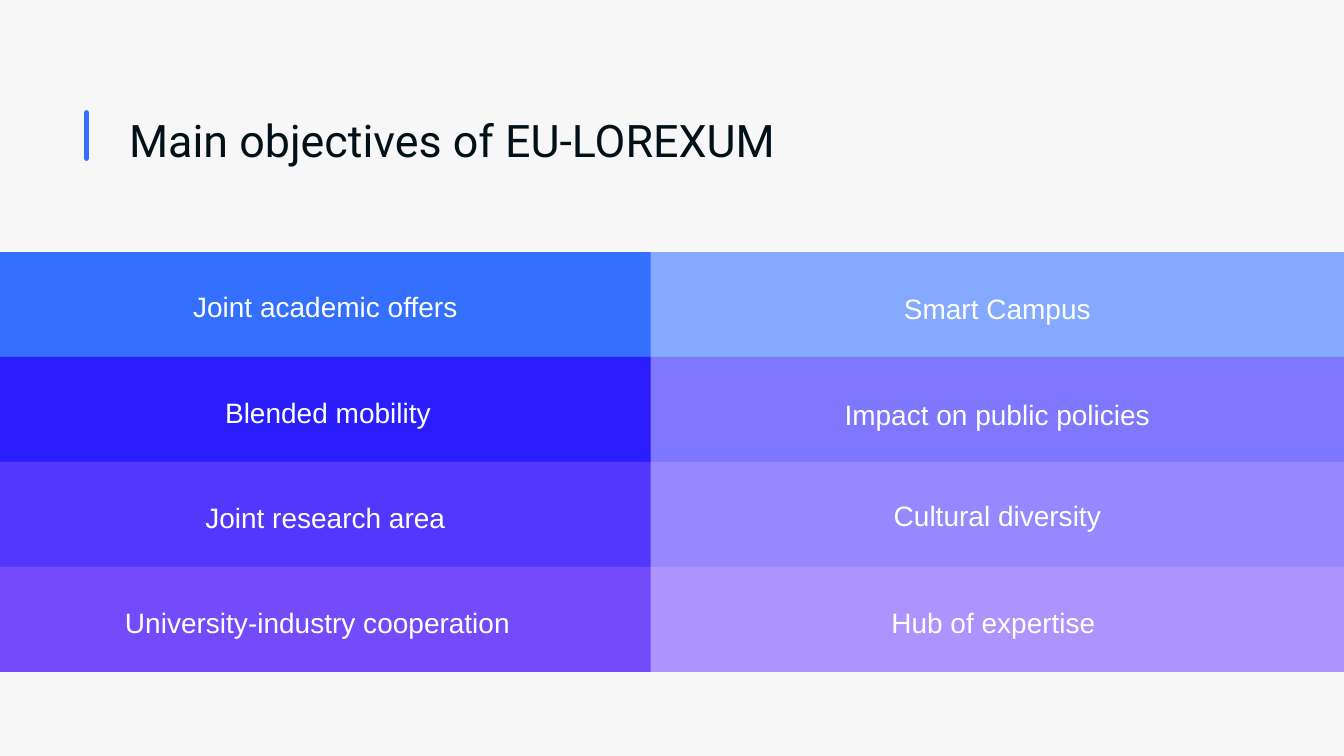
from dataclasses import dataclass

from lxml.etree import SubElement
from pptx import Presentation
from pptx.dml.color import RGBColor
from pptx.enum.shapes import MSO_CONNECTOR, MSO_SHAPE
from pptx.enum.text import MSO_ANCHOR, MSO_AUTO_SIZE, PP_ALIGN
from pptx.oxml.ns import qn
from pptx.util import Cm, Length, Pt

BACKGROUND = RGBColor(0xF7, 0xF7, 0xF7)
INK = RGBColor(0x01, 0x11, 0x17)
WHITE = RGBColor(0xFE, 0xFF, 0xFF)
BLUE = RGBColor(0x34, 0x6F, 0xFD)
INDIGO = RGBColor(0x2A, 0x1E, 0xFF)
VIOLET = RGBColor(0x53, 0x37, 0xFD)
PURPLE = RGBColor(0x74, 0x4B, 0xFB)
LIGHT_BLUE = RGBColor(0x85, 0xA9, 0xFE)
LIGHT_INDIGO = RGBColor(0x7F, 0x78, 0xFF)
LIGHT_VIOLET = RGBColor(0x98, 0x87, 0xFE)
LIGHT_PURPLE = RGBColor(0xAC, 0x93, 0xFD)

SLIDE_WIDTH = Cm(33.87)
COLUMN_SPLIT = Cm(16.4)
BANDS_TOP = Cm(6.35)
BAND_HEIGHT = Cm(2.645)
LABEL_HEIGHT = Cm(1.2)


@dataclass(frozen=True)
class Objective:
    label: str
    color: RGBColor
    label_top: float  # distance from the top of the slide, in cm
    indent: float = 0  # extra distance from the column's left edge, in cm


LEFT_OBJECTIVES = [
    Objective("Joint academic offers", BLUE, 7.0),
    Objective("Blended mobility ", INDIGO, 9.68, 0.33),
    Objective("Joint research area", VIOLET, 12.32),
    Objective("University-industry cooperation  ", PURPLE, 14.97),
]
RIGHT_OBJECTIVES = [
    Objective("Smart Campus", LIGHT_BLUE, 7.04),
    Objective("Impact on public policies", LIGHT_INDIGO, 9.72),
    Objective("Cultural diversity", LIGHT_VIOLET, 12.27),
    Objective("Hub of expertise ", LIGHT_PURPLE, 14.97),
]


def place(shape, left: Length, top: Length, width: Length, height: Length) -> None:
    shape.left, shape.top, shape.width, shape.height = left, top, width, height


def format_font(paragraph, name: str, size: int, color: RGBColor) -> None:
    for run in paragraph.runs:
        run.font.name = name
        run.font.size = Pt(size)
        run.font.color.rgb = color


def add_bands(slide, objectives: list[Objective], left: Length) -> None:
    for row, objective in enumerate(objectives):
        band = slide.shapes.add_shape(
            MSO_SHAPE.RECTANGLE, left, BANDS_TOP + row * BAND_HEIGHT,
            SLIDE_WIDTH - left, BAND_HEIGHT)
        band.shadow.inherit = False
        band.fill.solid()
        band.fill.fore_color.rgb = objective.color
        band.line.fill.background()


def write_label(label, objective: Objective, left: Length, right: Length) -> None:
    start = left + Cm(objective.indent)
    place(label, start, Cm(objective.label_top), right - start, LABEL_HEIGHT)
    frame = label.text_frame
    frame.text = objective.label
    frame.word_wrap = True
    frame.auto_size = MSO_AUTO_SIZE.SHAPE_TO_FIT_TEXT
    paragraph = frame.paragraphs[0]
    paragraph.alignment = PP_ALIGN.CENTER
    paragraph.line_spacing = 1.2
    paragraph.space_before = Pt(25)
    format_font(paragraph, "Arial", 20, WHITE)


def add_labels(slide, objectives: list[Objective], left: Length, right: Length) -> None:
    for objective in objectives:
        label = slide.shapes.add_textbox(left, 0, right - left, LABEL_HEIGHT)
        write_label(label, objective, left, right)


def write_title(title) -> None:
    place(title, Cm(3.0), Cm(2.79), Cm(26.85), Cm(1.63))
    frame = title.text_frame
    frame.text = "Main objectives of EU-LOREXUM"
    frame.auto_size = MSO_AUTO_SIZE.NONE
    frame.vertical_anchor = MSO_ANCHOR.MIDDLE
    heading = frame.paragraphs[0]
    heading.alignment = PP_ALIGN.LEFT
    heading.line_spacing = 0.9
    format_font(heading, "Roboto", 32, INK)


def write_first_objective(body) -> None:
    # The placeholder has to lie above the bands
    body._element.getparent().append(body._element)
    write_label(body, LEFT_OBJECTIVES[0], Cm(0), COLUMN_SPLIT)
    properties = body.text_frame.paragraphs[0]._p.get_or_add_pPr()
    properties.set("marL", "0")
    properties.set("indent", "0")
    SubElement(properties, qn("a:buNone"))


def add_title_accent(slide) -> None:
    accent = slide.shapes.add_connector(
        MSO_CONNECTOR.STRAIGHT, Cm(2.18), Cm(2.84), Cm(2.18), Cm(3.99))
    accent.line.color.rgb = BLUE
    accent.line.width = Pt(3.75)
    accent.line._get_or_add_ln().set("cap", "rnd")
    SubElement(accent._element.spPr, qn("a:effectLst"))


def main() -> None:
    presentation = Presentation()
    presentation.slide_width = SLIDE_WIDTH
    presentation.slide_height = Cm(19.05)
    slide = presentation.slides.add_slide(presentation.slide_layouts[1])
    slide.background.fill.solid()
    slide.background.fill.fore_color.rgb = BACKGROUND

    # Title with its accent line
    write_title(slide.shapes.title)
    add_title_accent(slide)

    # Coloured bands: the right column covers the full-width ones
    add_bands(slide, LEFT_OBJECTIVES, Cm(0))
    add_bands(slide, RIGHT_OBJECTIVES, COLUMN_SPLIT)

    # Objectives
    write_first_objective(slide.placeholders[1])
    add_labels(slide, LEFT_OBJECTIVES[1:], Cm(0), COLUMN_SPLIT)
    add_labels(slide, RIGHT_OBJECTIVES, COLUMN_SPLIT, SLIDE_WIDTH)

    presentation.save("out.pptx")


if __name__ == "__main__":
    main()
